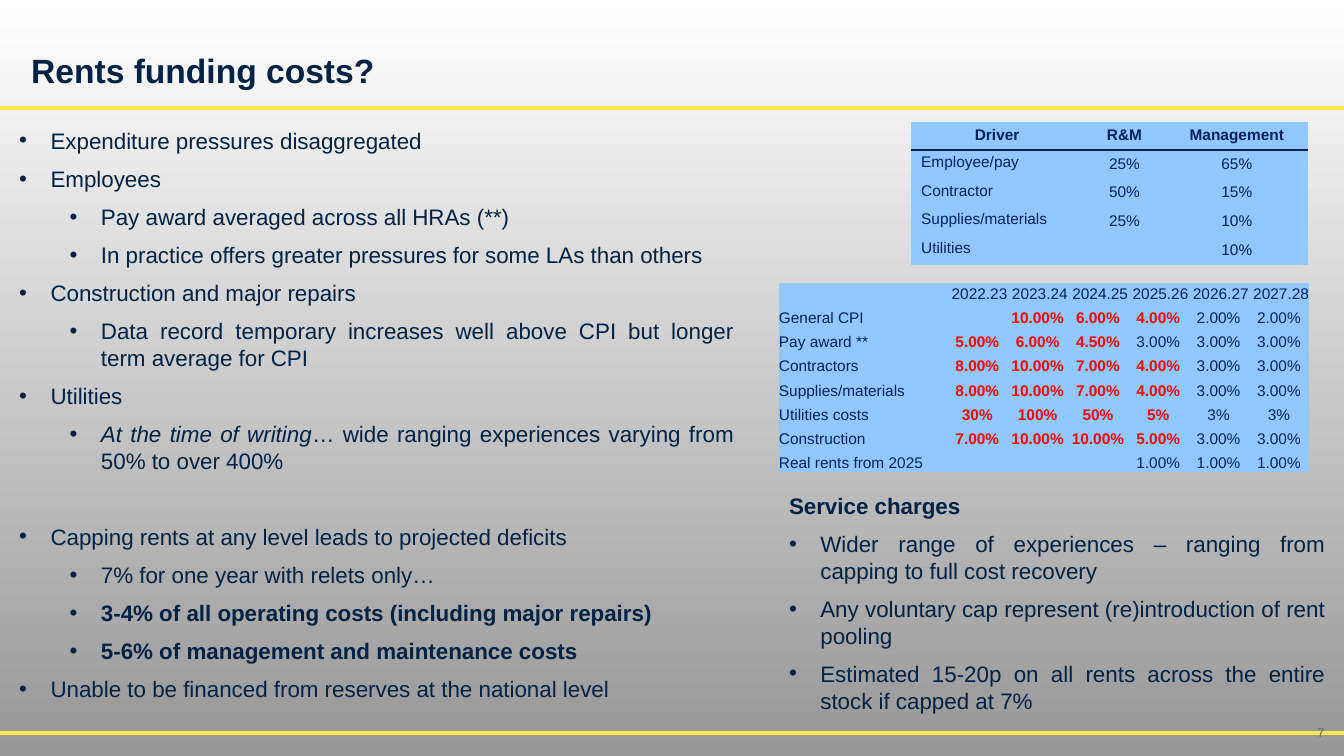
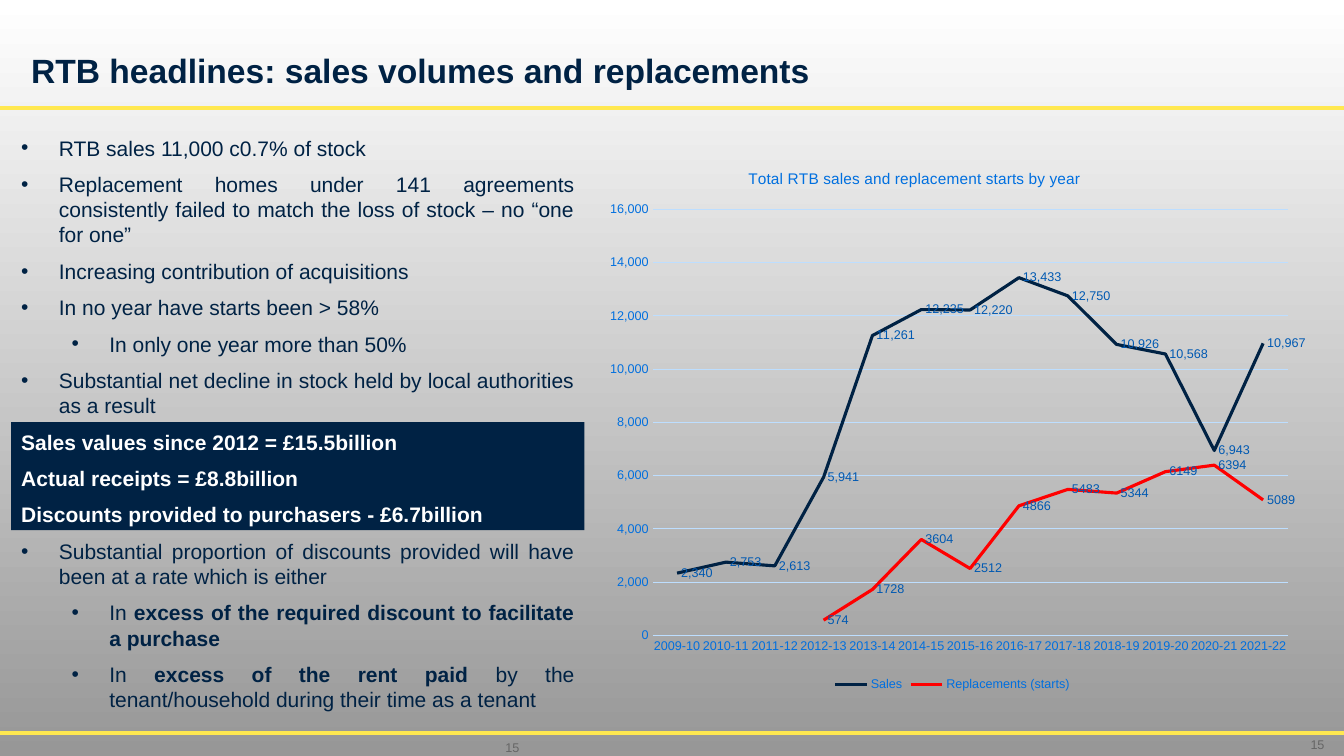
import pptx
import pptx.chart.data
import pptx.dml.color
import pptx.enum.chart
import pptx.enum.shapes
import pptx.enum.text
import pptx.oxml
import pptx.oxml.ns
import pptx.util
from lxml import etree

Cm, Pt = pptx.util.Cm, pptx.util.Pt
ALIGN = pptx.enum.text.PP_ALIGN
ANCHOR = pptx.enum.text.MSO_ANCHOR
qn = pptx.oxml.ns.qn

# Shared style
FONT = "Arial"
NAVY, YELLOW, RED, WHITE, GREY = "002244", "FFE850", "FF0000", "FFFFFF", "666666"
TABLE_TEXT, TABLE_FILL = "002060", "91C8FF"
AXIS_TEXT, LABEL_TEXT, GRID = "006FDF", "0059B2", "BDDEFF"
SLIDE_WIDTH, SLIDE_HEIGHT = 33.87, 19.05
NO_STYLE = "{2D5ABB26-0587-4C30-8999-92F81FD0307C}"


def rgb(value):
    return pptx.dml.color.RGBColor.from_string(value)


def style_font(font, size, color, bold=False, italic=False):
    font.name, font.size = FONT, Pt(size)
    font.bold, font.italic = bold, italic
    font.color.rgb = rgb(color)


def write(paragraph, text, size=16, color=NAVY, bold=False, italic=False,
          align=ALIGN.LEFT, before=0, after=0, spacing=1.0):
    """Fill a paragraph; text is a string or a list of (string, run format)."""
    paragraph.alignment = align
    paragraph.space_before, paragraph.space_after = Pt(before), Pt(after)
    paragraph.line_spacing = spacing
    for part, changes in [(text, {})] if isinstance(text, str) else text:
        run = paragraph.add_run()
        run.text = part
        base = {"size": size, "color": color, "bold": bold, "italic": italic}
        style_font(run.font, **{**base, **changes})


def set_bullet(paragraph, level, hang):
    """Level None gives plain text without an indent."""
    props = paragraph._p.get_or_add_pPr()
    if level is None:
        props.set("marL", "0")
        props.set("indent", "0")
        etree.SubElement(props, qn("a:buNone"))
        return
    paragraph.level = level
    props.set("marL", str(int(Cm(hang + 1.27 * level))))
    props.set("indent", str(-int(Cm(hang))))
    etree.SubElement(props, qn("a:buFont")).set("typeface", FONT)
    etree.SubElement(props, qn("a:buChar")).set("char", "•")


def set_layout(element, index, **places):
    """Fix the place of a chart part, in fractions of the chart."""
    for old in element.findall(qn("c:layout")):
        element.remove(old)
    layout = pptx.oxml.parse_xml(
        f'<c:layout {pptx.oxml.ns.nsdecls("c")}><c:manualLayout/></c:layout>')
    modes = {"xMode": "edge", "yMode": "edge"}
    if "w" in places:
        modes = {"layoutTarget": "inner", **modes}
    for tag, value in {**modes, **places}.items():
        etree.SubElement(layout[0], qn(f"c:{tag}")).set("val", str(value))
    element.insert(index, layout)


class Deck:
    def __init__(self):
        self.prs = pptx.Presentation()
        self.prs.slide_width, self.prs.slide_height = Cm(SLIDE_WIDTH), Cm(SLIDE_HEIGHT)
        self.slide = None
        fill = self.prs.slide_master.background.fill
        fill.gradient()
        fill.gradient_angle = 270
        for stop, color in zip(fill.gradient_stops, (WHITE, "979797")):
            stop.color.rgb = rgb(color)

    def new_slide(self, title, layout):
        self.slide = self.prs.slides.add_slide(self.prs.slide_layouts.get_by_name(layout))
        for y in (2.72, 18.47):
            self.rule(y)
        frame = self.place(self.slide.shapes.title, (0.53, 1.14, 31.09, 1.27))
        frame.vertical_anchor = ANCHOR.BOTTOM
        write(frame.paragraphs[0], title, size=24, bold=True, spacing=0.9)

    def place(self, shape, box):
        shape.left, shape.top, shape.width, shape.height = map(Cm, box)
        frame = shape.text_frame
        frame.word_wrap = True
        frame.auto_size = pptx.enum.text.MSO_AUTO_SIZE.NONE
        return frame

    def rule(self, y):
        line = self.slide.shapes.add_connector(
            pptx.enum.shapes.MSO_CONNECTOR.STRAIGHT, 0, Cm(y), Cm(SLIDE_WIDTH), Cm(y))
        line.line.color.rgb, line.line.width = rgb(YELLOW), Pt(3)
        etree.SubElement(line._element.spPr, qn("a:effectLst"))

    def page_number(self, number, x, y):
        box = self.slide.shapes.add_textbox(0, 0, 0, 0)
        frame = self.place(box, (x, y, 1.3, 0.58))
        frame.vertical_anchor = ANCHOR.MIDDLE
        write(frame.paragraphs[0], number, size=9, color=GREY, align=ALIGN.RIGHT)

    def bullets(self, index, box, items, size, hang):
        frame = self.place(self.slide.placeholders[index], box)
        frame.vertical_anchor = ANCHOR.TOP
        for i, (level, text, *changes) in enumerate(items):
            paragraph = frame.add_paragraph() if i else frame.paragraphs[0]
            write(paragraph, text, **{
                "size": size, "align": ALIGN.JUSTIFY, "after": 8,
                **(changes[0] if changes else {})})
            set_bullet(paragraph, level, hang)

    def band(self, box, color):
        """A plain rectangle behind everything else."""
        band = self.slide.shapes.add_shape(
            pptx.enum.shapes.MSO_SHAPE.RECTANGLE, *map(Cm, box))
        band.shadow.inherit = False
        band.fill.solid()
        band.fill.fore_color.rgb = rgb(color)
        band.line.fill.background()
        self.slide.shapes._spTree.insert(2, band._element)

    def table(self, x, y, widths, heights, rows, cell_format, tight=False):
        """cell_format(row, column, text) gives the text format of a cell."""
        table = self.slide.shapes.add_table(
            len(rows), len(widths), Cm(x), Cm(y),
            Cm(sum(widths)), Cm(sum(heights))).table
        table._tbl.tblPr.find(qn("a:tableStyleId")).text = NO_STYLE
        table.first_row = table.horz_banding = False
        for column, width in zip(table.columns, widths):
            column.width = Cm(width)
        for r, (height, row) in enumerate(zip(heights, rows)):
            table.rows[r].height = Cm(height)
            for c, text in enumerate(row):
                cell = table.cell(r, c)
                cell.fill.solid()
                cell.fill.fore_color.rgb = rgb(TABLE_FILL)
                if tight:
                    cell.margin_left = cell.margin_right = 0
                    cell.margin_top = cell.margin_bottom = 0
                    cell.vertical_anchor = ANCHOR.BOTTOM
                paragraph = cell.text_frame.paragraphs[0]
                if text:
                    write(paragraph, text, **{
                        "size": 11, "color": TABLE_TEXT, **cell_format(r, c, text)})
                else:
                    etree.SubElement(paragraph._p, qn("a:endParaRPr")).set("sz", "1100")
        return table

    def underline_row(self, cells):
        for cell in cells:
            border = pptx.oxml.parse_xml(
                f'<a:lnB {pptx.oxml.ns.nsdecls("a")} w="{int(Pt(1.5))}"><a:solidFill>'
                f'<a:srgbClr val="{NAVY}"/></a:solidFill></a:lnB>')
            cell._tc.get_or_add_tcPr().insert(0, border)

    def line_chart(self, box, title, categories, series):
        """series: (name, values, colour, label number format)."""
        data = pptx.chart.data.CategoryChartData()
        data.categories = categories
        for name, values, *_ in series:
            data.add_series(name, values)
        chart = self.slide.shapes.add_chart(
            pptx.enum.chart.XL_CHART_TYPE.LINE, *map(Cm, box), data).chart
        style_font(chart.font, 10, NAVY)
        # Title, legend and plot area
        chart.has_title = True
        write(chart.chart_title.text_frame.paragraphs[0], title, size=11, color=AXIS_TEXT)
        set_layout(chart.chart_title._element, 1, x=0.21, y=0.03)
        set_layout(chart._chartSpace.chart.plotArea, 0, x=0.08, y=0.11, w=0.89, h=0.78)
        chart.has_legend = True
        chart.legend.position = pptx.enum.chart.XL_LEGEND_POSITION.BOTTOM
        chart.legend.include_in_layout = False
        style_font(chart.legend.font, 9, AXIS_TEXT)
        # Axes
        years, homes = chart.category_axis, chart.value_axis
        for axis in (years, homes):
            axis.major_tick_mark = axis.minor_tick_mark = pptx.enum.chart.XL_TICK_MARK.NONE
            style_font(axis.tick_labels.font, 9, AXIS_TEXT)
        years._element.txPr.bodyPr.set("rot", "-60000000")
        homes.minimum_scale, homes.maximum_scale, homes.major_unit = 0, 16000, 2000
        homes.tick_labels.number_format = "#,##0"
        homes.tick_labels.number_format_is_linked = False
        homes.format.line.fill.background()
        for line in (years.format.line, homes.major_gridlines.format.line):
            line.color.rgb, line.width = rgb(GRID), Pt(0.75)
        # Series
        plot = chart.plots[0]
        plot.vary_by_categories = False
        for drawn, (_, _, color, number_format) in zip(plot.series, series):
            drawn.smooth = False
            drawn.marker.style = pptx.enum.chart.XL_MARKER_STYLE.NONE
            drawn.format.line.color.rgb, drawn.format.line.width = rgb(color), Pt(2.25)
            labels = drawn.data_labels
            labels.show_value = True
            labels.number_format, labels.number_format_is_linked = number_format, False
            labels.position = pptx.enum.chart.XL_LABEL_POSITION.RIGHT
            style_font(labels.font, 9, LABEL_TEXT)


def driver_format(row, column, text):
    if row == 0:
        return {"bold": True, "align": ALIGN.CENTER}
    return {"align": ALIGN.CENTER} if column else {"spacing": 0.9}


def inflation_format(row, column, text):
    if row == 0:
        return {"align": ALIGN.RIGHT}
    if column == 0:
        return {}
    # Rates above the 3% assumption stand out
    high = float(text.rstrip("%")) > 3
    return {"align": ALIGN.CENTER, "bold": high, "color": RED if high else TABLE_TEXT}


def rents_slide(deck):
    deck.new_slide("Rents funding costs?", "Two Content")
    deck.page_number("7", 32.33, 18.16)
    deck.bullets(1, (0.23, 3.07, 18.52, 14.91), [
        (0, "Expenditure pressures disaggregated"),
        (0, "Employees"),
        (1, "Pay award averaged across all HRAs (**)"),
        (1, "In practice offers greater pressures for some LAs than others"),
        (0, "Construction and major repairs"),
        (1, "Data record temporary increases well above CPI but longer term average for CPI"),
        (0, "Utilities"),
        (1, [("At the time of writing", {"italic": True}),
             ("… wide ranging experiences varying from 50% to over 400%", {})]),
        (0, "Capping rents at any level leads to projected deficits", {"before": 27}),
        (1, "7% for one year with relets only…"),
        (1, "3-4% of all operating costs (including major repairs)", {"bold": True}),
        (1, "5-6% of management and maintenance costs", {"bold": True}),
        (0, "Unable to be financed from reserves at the national level"),
    ], size=16, hang=0.79)
    drivers = deck.table(22.96, 3.07, [4.34, 2.08, 3.58], [0.72] * 5, [
        ["Driver", "R&M", "Management"],
        ["Employee/pay", "25%", "65%"],
        ["Contractor", "50%", "15%"],
        ["Supplies/materials", "25%", "10%"],
        ["Utilities", "", "10%"],
    ], driver_format)
    deck.underline_row(drivers.rows[0].cells)
    deck.table(19.63, 7.14, [4.24] + [1.52] * 6, [0.48] + [0.61] * 7, [
        ["", "2022.23", "2023.24", "2024.25", "2025.26", "2026.27", "2027.28"],
        ["General CPI", "", "10.00%", "6.00%", "4.00%", "2.00%", "2.00%"],
        ["Pay award **", "5.00%", "6.00%", "4.50%", "3.00%", "3.00%", "3.00%"],
        ["Contractors", "8.00%", "10.00%", "7.00%", "4.00%", "3.00%", "3.00%"],
        ["Supplies/materials", "8.00%", "10.00%", "7.00%", "4.00%", "3.00%", "3.00%"],
        ["Utilities costs", "30%", "100%", "50%", "5%", "3%", "3%"],
        ["Construction", "7.00%", "10.00%", "10.00%", "5.00%", "3.00%", "3.00%"],
        ["Real rents from 2025", "", "", "", "1.00%", "1.00%", "1.00%"],
    ], inflation_format, tight=True)
    deck.bullets(2, (19.63, 12.27, 14.02, 5.89), [
        (None, "Service charges", {"bold": True}),
        (0, "Wider range of experiences – ranging from capping to full cost recovery"),
        (0, "Any voluntary cap represent (re)introduction of rent pooling"),
        (0, "Estimated 15-20p on all rents across the entire stock if capped at 7%"),
    ], size=16, hang=0.79)


def sales_slide(deck):
    deck.new_slide("RTB headlines: sales volumes and replacements", "Title and Content")
    deck.band((0.28, 10.64, 14.45, 2.72), NAVY)
    deck.page_number("15", 32.33, 18.47)
    deck.page_number("15", 12.04, 18.54)
    strong, on_band = {"bold": True}, {"bold": True, "color": WHITE}
    deck.bullets(1, (0.28, 3.28, 14.45, 14.94), [
        (0, "RTB sales 11,000 c0.7% of stock"),
        (0, "Replacement homes under 141 agreements consistently failed to match "
            "the loss of stock – no “one for one”"),
        (0, "Increasing contribution of acquisitions"),
        (0, "In no year have starts been > 58%"),
        (1, "In only one year more than 50%"),
        (0, "Substantial net decline in stock held by local authorities as a result"),
        (None, "Sales values since 2012 = £15.5billion", on_band),
        (None, "Actual receipts = £8.8billion", on_band),
        (None, "Discounts provided to purchasers - £6.7billion", on_band),
        (0, "Substantial proportion of discounts provided will have been at a rate "
            "which is either"),
        (1, [("In ", {}),
             ("excess of the required discount to facilitate a purchase", strong)]),
        (1, [("In ", {}), ("excess of the rent paid ", strong),
             ("by the tenant/household during their time as a tenant", {})]),
    ], size=15, hang=0.95)
    deck.line_chart(
        (15.01, 3.76, 17.98, 13.77), "Total RTB sales and replacement starts by year",
        [f"{year}-{year % 100 + 1}" for year in range(2009, 2022)], [
            ("Sales", [2340, 2753, 2613, 5941, 11261, 12235, 12220, 13433, 12750,
                       10926, 10568, 6943, 10967], NAVY, "#,##0"),
            ("Replacements (starts)", [None] * 3 + [574, 1728, 3604, 2512, 4866, 5483, 5344,
                                                    6149, 6394, 5089], RED, "General")])


def main():
    deck = Deck()
    rents_slide(deck)
    sales_slide(deck)
    deck.prs.save("out.pptx")


if __name__ == "__main__":
    main()
